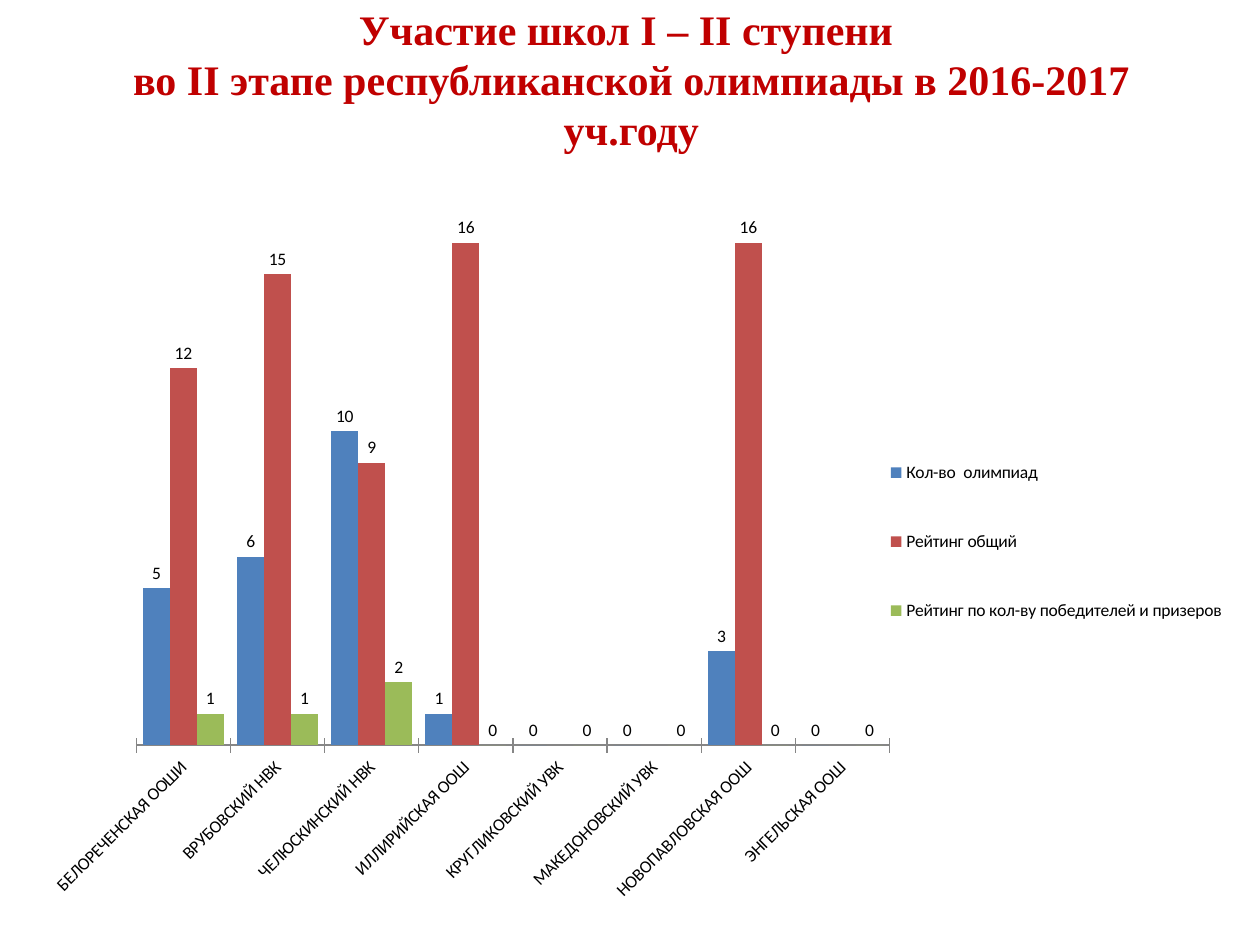
import dataclasses

import lxml.etree
import pptx
import pptx.chart.data
import pptx.dml.color
import pptx.enum.chart
import pptx.enum.text
import pptx.oxml.ns
import pptx.util
from pptx.util import Inches


@dataclasses.dataclass(frozen=True)
class Theme:
    """Colours, fonts and type sizes of the slide."""
    title_color: str = "C00000"
    title_font: str = "Times New Roman"
    title_size: int = 24
    chart_color: str = "000000"
    chart_font: str = "Calibri"
    chart_size: int = 10
    axis_color: str = "868686"


THEME = Theme()
HEADING = "Участие школ I – II ступени \vво II этапе республиканской олимпиады в 2016-2017 уч.году"
SCHOOLS = [
    "БЕЛОРЕЧЕНСКАЯ ООШИ", "ВРУБОВСКИЙ НВК", "ЧЕЛЮСКИНСКИЙ НВК", "ИЛЛИРИЙСКАЯ ООШ",
    "КРУГЛИКОВСКИЙ УВК", "МАКЕДОНОВСКИЙ УВК", "НОВОПАВЛОВСКАЯ ООШ", "ЭНГЕЛЬСКАЯ ООШ",
]
RATINGS = [
    ("Кол-во  олимпиад ", "4F81BD", [5, 6, 10, 1, 0, 0, 3, 0]),
    ("Рейтинг общий ", "C0504D", [12, 15, 9, 16, None, None, 16, None]),
    ("Рейтинг по кол-ву победителей и призеров", "9BBB59", [1, 1, 2, 0, 0, 0, 0, 0]),
]


def style_font(font, name, size, color):
    """Apply a typeface, size and colour to a font."""
    font.name = name
    font.size = pptx.util.Pt(size)
    font.color.rgb = pptx.dml.color.RGBColor.from_string(color)


def place_part(part, inner=False, **fractions):
    """Give a chart part a manual layout in fractions of the chart."""
    qn = pptx.oxml.ns.qn
    for automatic in part.findall(qn("c:layout")):
        part.remove(automatic)
    layout = lxml.etree.Element(qn("c:layout"))
    manual = lxml.etree.SubElement(layout, qn("c:manualLayout"))
    settings = [("xMode", "edge"), ("yMode", "edge"), *fractions.items()]
    if inner:
        settings.insert(0, ("layoutTarget", "inner"))
    for tag, value in settings:
        lxml.etree.SubElement(manual, qn(f"c:{tag}")).set("val", str(value))
    part.insert(len(part.findall(qn("c:legendPos"))), layout)


def add_heading(slide):
    """Fill and place the title placeholder."""
    title = slide.shapes.title
    title.left, title.top = Inches(0.51), Inches(0)
    title.width, title.height = Inches(9), Inches(1.25)
    frame = title.text_frame
    frame.text = HEADING
    frame.word_wrap = True
    frame.vertical_anchor = pptx.enum.text.MSO_ANCHOR.MIDDLE
    paragraph = frame.paragraphs[0]
    paragraph.alignment = pptx.enum.text.PP_ALIGN.CENTER
    style_font(paragraph.font, THEME.title_font, THEME.title_size, THEME.title_color)
    paragraph.font.bold = True


def format_axes(chart):
    """Hide the value axis and slant the school names."""
    values = chart.value_axis
    values.visible = False
    values.has_major_gridlines = False
    values.minimum_scale, values.maximum_scale = 0, 18
    schools = chart.category_axis
    schools.major_tick_mark = pptx.enum.chart.XL_TICK_MARK.CROSS
    schools.format.line.color.rgb = pptx.dml.color.RGBColor.from_string(THEME.axis_color)
    style_font(schools.tick_labels.font, THEME.chart_font, THEME.chart_size, THEME.chart_color)
    schools._element.find(".//" + pptx.oxml.ns.qn("a:bodyPr")).set("rot", "-2700000")


def format_columns(plot):
    """Colour the columns and show a value above each."""
    plot.gap_width, plot.overlap = 50, 0
    plot.vary_by_categories = False
    for series, (_, color, _) in zip(plot.series, RATINGS):
        series.format.fill.solid()
        series.format.fill.fore_color.rgb = pptx.dml.color.RGBColor.from_string(color)
        series.invert_if_negative = False
        series.data_labels.show_value = True
        series.data_labels.position = pptx.enum.chart.XL_LABEL_POSITION.OUTSIDE_END


def add_ratings_chart(slide):
    """Add the clustered columns that compare the schools."""
    ratings = pptx.chart.data.CategoryChartData()
    ratings.categories = SCHOOLS
    for name, _, values in RATINGS:
        ratings.add_series(name, values)
    chart = slide.shapes.add_chart(
        pptx.enum.chart.XL_CHART_TYPE.COLUMN_CLUSTERED,
        Inches(0.2), Inches(1.31), Inches(9.8), Inches(5.98), ratings).chart
    style_font(chart.font, THEME.chart_font, THEME.chart_size, THEME.chart_color)
    chart.has_title = False
    chart.has_legend = True
    chart.legend.position = pptx.enum.chart.XL_LEGEND_POSITION.RIGHT
    chart.legend.include_in_layout = False
    format_axes(chart)
    format_columns(chart.plots[0])
    plot_area = chart._chartSpace.find(".//" + pptx.oxml.ns.qn("c:plotArea"))
    place_part(plot_area, inner=True, x=0.09, y=0.02, w=0.61, h=0.75)
    place_part(chart.legend._element, x=0.68, y=0.33, w=0.31, h=0.34)


def main():
    """Build and save the slide."""
    presentation = pptx.Presentation()
    presentation.slide_width, presentation.slide_height = Inches(10), Inches(7.5)
    slide = presentation.slides.add_slide(presentation.slide_layouts.get_by_name("Title Only"))
    add_heading(slide)
    add_ratings_chart(slide)
    presentation.save("out.pptx")


if __name__ == "__main__":
    main()
